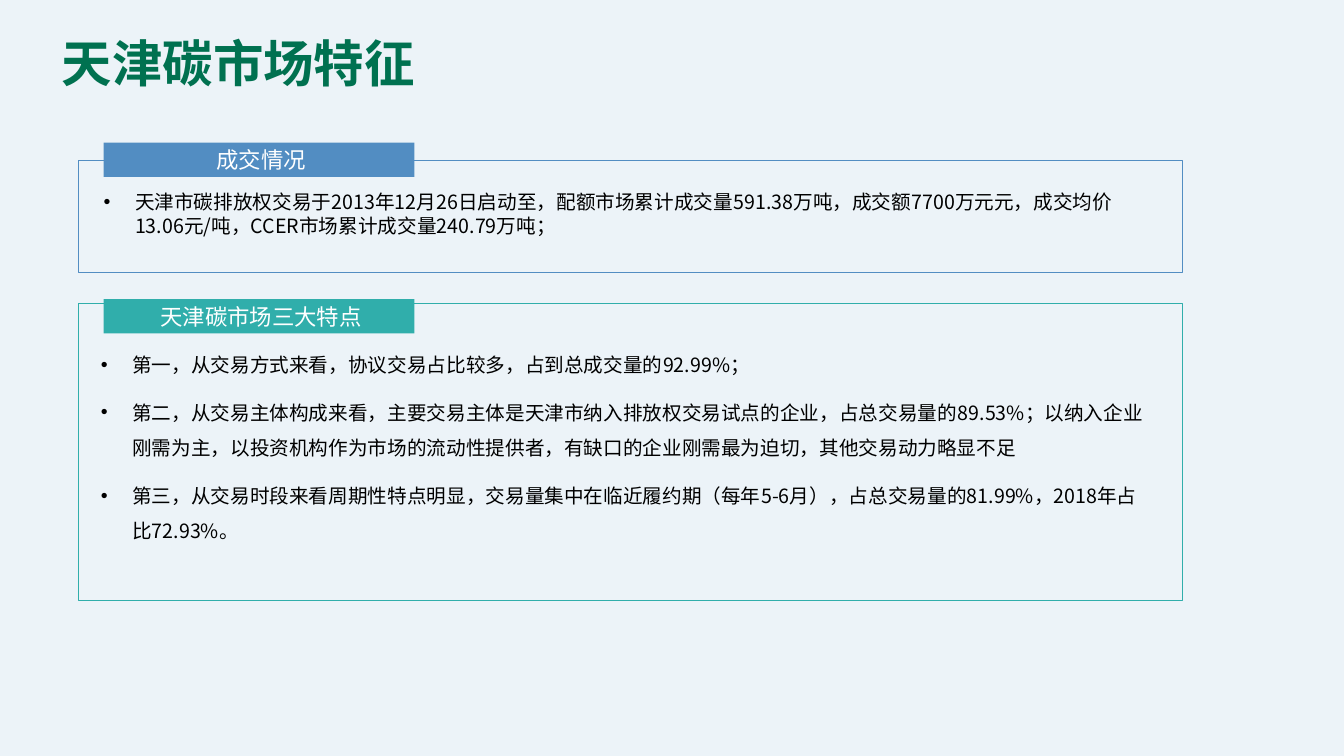
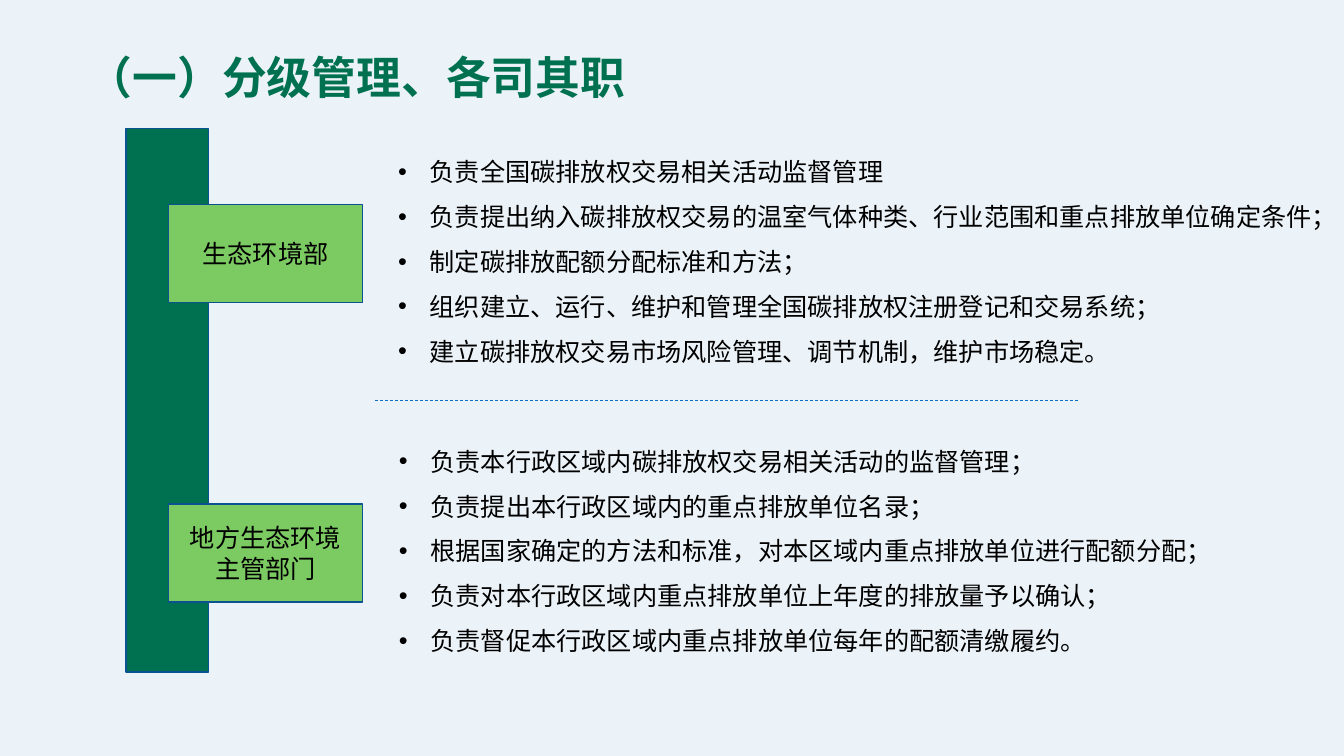
from lxml import etree
from pptx import Presentation
from pptx.dml.color import RGBColor
from pptx.enum.dml import MSO_LINE
from pptx.enum.shapes import MSO_CONNECTOR, MSO_SHAPE
from pptx.enum.text import MSO_ANCHOR, MSO_AUTO_SIZE, PP_ALIGN
from pptx.oxml.ns import qn
from pptx.util import Pt

RECT = MSO_SHAPE.RECTANGLE
LINE = MSO_CONNECTOR.STRAIGHT
DASH = MSO_LINE.DASH
MIDDLE = MSO_ANCHOR.MIDDLE
FIXED = MSO_AUTO_SIZE.NONE
LEFT, CENTER = PP_ALIGN.LEFT, PP_ALIGN.CENTER
SANS = "Noto Sans CJK SC"
HEAD = "Montserrat"
BODY = "Calibri"
COLORS = {
    "back": "ECF3F8", "green": "007150", "blue": "528DC2", "teal": "30AEAB",
    "lime": "7CCA62", "navy": "0B5292", "rule": "0F6FC6",
    "black": "000000", "white": "FFFFFF",
}


class Deck:
    def __init__(self):
        self.prs = Presentation()
        self.prs.slide_width, self.prs.slide_height = Pt(960), Pt(540)
        self.paint(self.prs.slide_master.background.fill, "back")
        self.slide = None

    def paint(self, fill, color):
        fill.solid()
        fill.fore_color.rgb = RGBColor.from_string(COLORS[color])

    def style(self, frame, size, color, face=SANS, bold=False):
        for para in frame.paragraphs:
            for run in para.runs:
                font = run.font
                font.size, font.name, font.bold = Pt(size), face, bold
                font.color.rgb = RGBColor.from_string(COLORS[color])
                east = etree.SubElement(font._element, qn("a:ea"))
                east.set("typeface", SANS)

    def page(self, text, left, top, width, size):
        self.slide = self.prs.slides.add_slide(self.prs.slide_layouts[5])
        title = self.slide.shapes.title
        title.left, title.top = Pt(left), Pt(top)
        title.width, title.height = Pt(width), Pt(66)
        frame = title.text_frame
        frame.text = text
        frame.word_wrap, frame.auto_size = True, FIXED
        frame.vertical_anchor = MIDDLE
        para = frame.paragraphs[0]
        para.alignment, para.line_spacing = LEFT, 0.9
        self.style(frame, size, "green", HEAD, True)

    def box(self, area, fill=None, line=None, weight=1):
        shape = self.slide.shapes.add_shape(RECT, *map(Pt, area))
        shape.shadow.inherit = False
        if fill:
            self.paint(shape.fill, fill)
        else:
            shape.fill.background()
        if line:
            self.paint(shape.line.fill, line)
            shape.line.width = Pt(weight)
        else:
            shape.line.fill.background()
        return shape

    def label(self, shape, text, size, color, face=SANS):
        frame = shape.text_frame
        frame.text = text
        frame.word_wrap, frame.vertical_anchor = True, MIDDLE
        frame.paragraphs[0].alignment = CENTER
        self.style(frame, size, color, face)

    def card(self, top, height, tab, text, color):
        self.box((56.2, top, 788.4, height), line=color, weight=0.75)
        shape = self.box((74, tab, 222, 24.5), color)
        frame = shape.text_frame
        frame.margin_left = Pt(3)
        frame.margin_right = frame.margin_top = frame.margin_bottom = 0
        self.label(shape, text, 16, "white")

    def bullets(self, area, items, size, pitch=1.0, after=0):
        frame = self.slide.shapes.add_textbox(*map(Pt, area)).text_frame
        frame.word_wrap = True
        frame.margin_left = frame.margin_right = 0
        frame.margin_top = frame.margin_bottom = 0
        frame.text = "\n".join(items)
        for para in frame.paragraphs:
            props = para._p.get_or_add_pPr()
            props.set("marL", str(Pt(22.5)))
            props.set("indent", str(Pt(-22.5)))
            etree.SubElement(props, qn("a:buFont")).set("typeface", "Arial")
            etree.SubElement(props, qn("a:buChar")).set("char", "•")
            para.line_spacing, para.space_after = pitch, Pt(after)
        self.style(frame, size, "black")

    def rule(self, left, right, top):
        line = self.slide.shapes.add_connector(
            LINE, Pt(left), Pt(top), Pt(right), Pt(top))
        self.paint(line.line.fill, "rule")
        line.line.width, line.line.dash_style = Pt(0.5), DASH
        etree.SubElement(line._element.spPr, qn("a:effectLst"))


def market(deck):
    deck.page("天津碳市场特征", 37, 14.4, 392, 36)
    deck.card(115, 80, 102, "成交情况", "blue")
    deck.card(216.8, 212.2, 213.7, "天津碳市场三大特点", "teal")
    deck.bullets((74, 136, 751, 45), [
        "天津市碳排放权交易于2013年12月26日启动至，配额市场累计成交量591.38万吨，"
        "成交额7700万元元，成交均价13.06元/吨，CCER市场累计成交量240.79万吨；",
    ], 14, after=9)
    deck.bullets((72, 243.4, 752.4, 178), [
        "第一，从交易方式来看，协议交易占比较多，占到总成交量的92.99%；",
        "第二，从交易主体构成来看，主要交易主体是天津市纳入排放权交易试点的企业，"
        "占总交易量的89.53%；以纳入企业刚需为主，以投资机构作为市场的流动性提供者，"
        "有缺口的企业刚需最为迫切，其他交易动力略显不足",
        "第三，从交易时段来看周期性特点明显，交易量集中在临近履约期（每年5-6月），"
        "占总交易量的81.99%，2018年占比72.93%。",
    ], 14, 1.5, 9)


def duties(deck):
    deck.page("（一）分级管理、各司其职", 55.4, 24, 798, 32)
    deck.box((90, 92, 59, 388), "green", "navy")
    groups = [
        (146.2, "生态环境部", (284.4, 101.5, 676, 165), [
            "负责全国碳排放权交易相关活动监督管理",
            "负责提出纳入碳排放权交易的温室气体种类、行业范围和重点排放单位确定条件；",
            "制定碳排放配额分配标准和方法；",
            "组织建立、运行、维护和管理全国碳排放权注册登记和交易系统；",
            "建立碳排放权交易市场风险管理、调节机制，维护市场稳定。",
        ]),
        (360, "地方生态环境主管部门", (285, 308.2, 595.4, 165), [
            "负责本行政区域内碳排放权交易相关活动的监督管理；",
            "负责提出本行政区域内的重点排放单位名录；",
            "根据国家确定的方法和标准，对本区域内重点排放单位进行配额分配；",
            "负责对本行政区域内重点排放单位上年度的排放量予以确认；",
            "负责督促本行政区域内重点排放单位每年的配额清缴履约。",
        ]),
    ]
    for top, name, area, items in groups:
        shape = deck.box((120.2, top, 139, 70), "lime", "navy")
        deck.label(shape, name, 18, "black", BODY)
        deck.bullets(area, items, 18, Pt(32))
    deck.rule(268, 770.4, 286)


def main():
    deck = Deck()
    market(deck)
    duties(deck)
    deck.prs.save("out.pptx")


if __name__ == "__main__":
    main()
